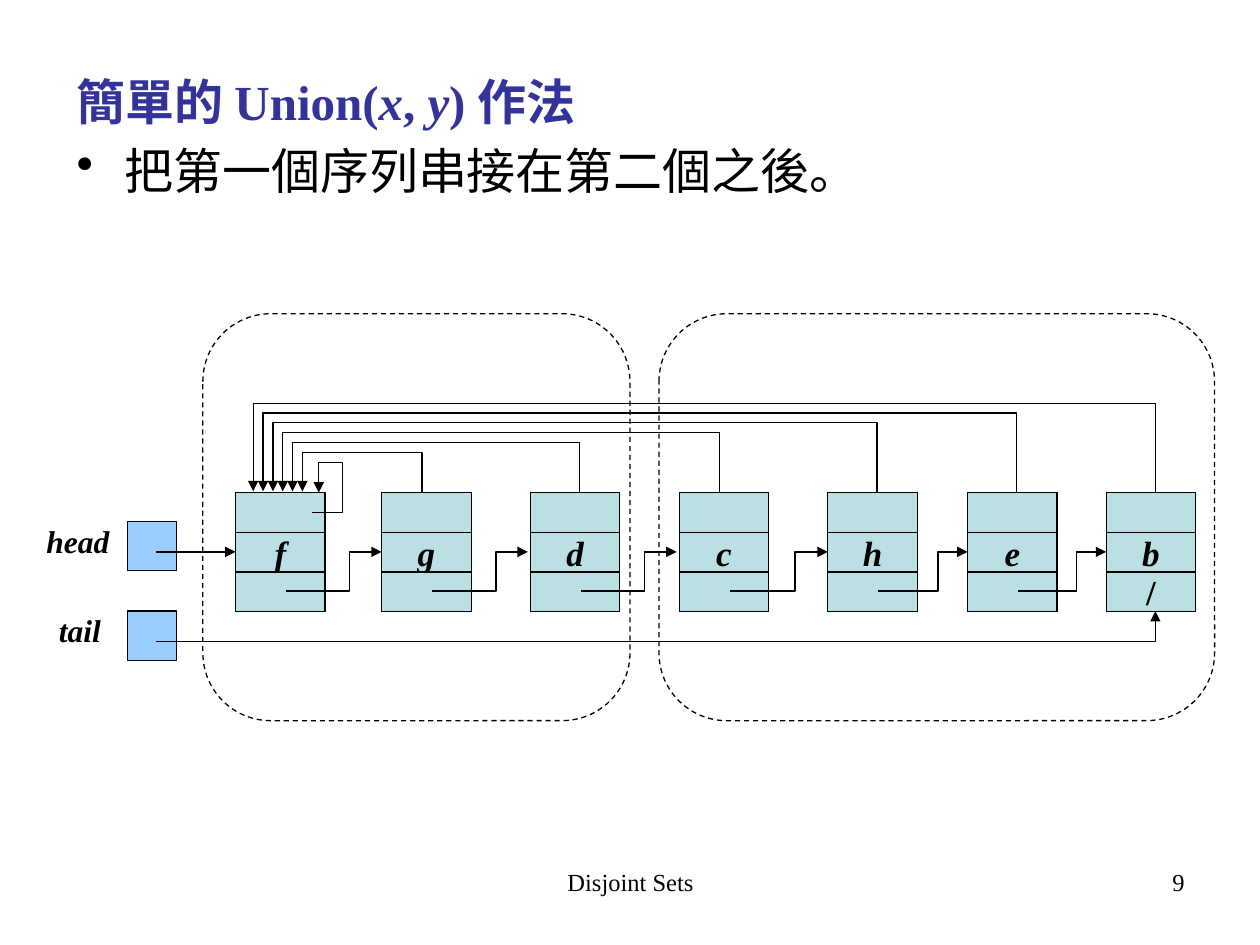
from dataclasses import dataclass

from lxml import etree
from pptx import Presentation
from pptx import util as u
from pptx.dml.color import RGBColor
from pptx.enum import dml, shapes, text
from pptx.oxml import ns

BLACK = RGBColor(0x00, 0x00, 0x00)
TITLE_BLUE = RGBColor(0x33, 0x33, 0x99)
CELL_TEAL = RGBColor(0xBB, 0xE0, 0xE3)
POINTER_BLUE = RGBColor(0x99, 0xCC, 0xFF)
FONT = "Times New Roman"

CELL_W, CELL_H = 0.71, 0.315
NODE_TOP = 3.91
MEMBER_MID = 4.38
NEXT_MID = 4.69
SLOT_GAP = 0.39 / 5  # between neighbouring pointers back to the representative

Point = tuple[float, float]


@dataclass(frozen=True)
class Node:
    name: str
    left: float
    back_dx: float = 0.39  # where the pointer to the representative leaves
    entry_gap: float = 0.0  # space before the node for the arriving arrow
    next_text: str = ""


@dataclass(frozen=True)
class Pointer:
    label: str
    label_left: float
    label_top: float
    label_width: float
    box_top: float


NODES = [
    Node("f", 1.87),
    Node("g", 3.03, back_dx=0.32),
    Node("d", 4.21, entry_gap=0.02),
    Node("c", 5.39, back_dx=0.32, entry_gap=0.02),
    Node("h", 6.57),
    Node("e", 7.68),
    Node("b", 8.78, next_text="/"),
]
POINTERS = [
    Pointer("head", 0.27, 4.09, 0.7, 4.14),
    Pointer("tail", 0.37, 4.8, 0.53, 4.85),
]
SETS = [(1.61, 3.39), (5.23, 4.41)]  # left, width


def style_font(font, size, color=BLACK, bold=False, italic=None):
    font.name = FONT
    font.size = u.Pt(size)
    font.bold = bold
    font.italic = italic
    font.color.rgb = color


def style_line(line):
    line.color.rgb = BLACK
    line.width = u.Pt(0.75)


def add_arrowhead(s):
    ln = s.line._get_or_add_ln()
    etree.SubElement(ln, ns.qn("a:tailEnd"), type="triangle")


def add_text(slide, content: str, left: float, top: float, width: float, height: float,
             size: float, align=text.PP_ALIGN.LEFT, bold=False, italic=None, wrap=True):
    s = slide.shapes.add_textbox(*map(u.Inches, (left, top, width, height)))
    tf = s.text_frame
    tf.word_wrap = wrap
    p = tf.paragraphs[0]
    p.text = content
    p.alignment = align
    style_font(p.font, size, bold=bold, italic=italic)


def add_box(slide, left: float, top: float, width: float, height: float,
            fill: RGBColor, label: str = "", italic: bool = True):
    s = slide.shapes.add_shape(shapes.MSO_SHAPE.RECTANGLE,
                               *map(u.Inches, (left, top, width, height)))
    s.shadow.inherit = False
    s.fill.solid()
    s.fill.fore_color.rgb = fill
    style_line(s.line)
    if label:
        tf = s.text_frame
        tf.word_wrap = False
        tf.vertical_anchor = text.MSO_ANCHOR.MIDDLE
        p = tf.paragraphs[0]
        p.text = label
        p.alignment = text.PP_ALIGN.CENTER
        style_font(p.font, 20, bold=True, italic=italic)


def add_path_arrow(slide, *points: Point):
    """Draw a bent arrow through the points, its head at the last one."""
    start, *rest = [(u.Inches(x), u.Inches(y)) for x, y in points]
    builder = slide.shapes.build_freeform(*start)
    builder.add_line_segments(rest, close=False)
    s = builder.convert_to_shape()
    s.shadow.inherit = False
    s.fill.background()
    style_line(s.line)
    add_arrowhead(s)


def add_straight_arrow(slide, start: Point, end: Point):
    s = slide.shapes.add_connector(shapes.MSO_CONNECTOR.STRAIGHT,
                                   *map(u.Inches, (*start, *end)))
    etree.SubElement(s._element.spPr, ns.qn("a:effectLst"))
    style_line(s.line)
    add_arrowhead(s)


def add_set_outline(slide, left: float, width: float):
    s = slide.shapes.add_shape(shapes.MSO_SHAPE.ROUNDED_RECTANGLE,
                               *map(u.Inches, (left, 2.49, width, 3.23)))
    s.adjustments[0] = 1 / 6
    s.shadow.inherit = False
    s.fill.background()
    style_line(s.line)
    s.line.dash_style = dml.MSO_LINE.DASH


def add_node(slide, node: Node):
    for row, label in enumerate(("", node.name, node.next_text)):
        add_box(slide, node.left, NODE_TOP + row * CELL_H, CELL_W, CELL_H,
                CELL_TEAL, label, italic=row == 1)


def add_back_pointer(slide, node: Node, slot: int):
    start_x = node.left + node.back_dx
    slot_x = 2.4 - slot * SLOT_GAP
    level = 3.59 - slot * SLOT_GAP
    add_path_arrow(slide, (start_x, 4.07), (start_x, level), (slot_x, level), (slot_x, 3.9))


def add_next_pointer(slide, node: Node, following: Node):
    start_x = node.left + 0.4
    end_x = following.left - following.entry_gap
    bend_x = start_x + (end_x - start_x) * 2 / 3
    add_path_arrow(slide, (start_x, NEXT_MID), (bend_x, NEXT_MID),
                   (bend_x, MEMBER_MID), (end_x, MEMBER_MID))


def add_body(slide):
    s = slide.shapes.add_textbox(*map(u.Inches, (0.51, 0.52, 9, 4.95)))
    tf = s.text_frame
    tf.word_wrap = True
    title, point = tf.paragraphs[0], tf.add_paragraph()
    for part in ("簡單的 Union(", "x", ", ", "y", ") 作法"):
        r = title.add_run()
        r.text = part
        style_font(r.font, 28, TITLE_BLUE, bold=True, italic=part in ("x", "y"))
    point.text = "把第一個序列串接在第二個之後。"
    style_font(point.font, 28)
    for p, bullet in ((title, ""), (point, "•")):
        pPr = p._p.get_or_add_pPr()
        pPr.set("marL", str(u.Inches(0.38)))
        pPr.set("indent", str(u.Inches(-0.38)))
        before = etree.Element(ns.qn("a:spcBef"))
        etree.SubElement(before, ns.qn("a:spcPct"), val="20000")
        pPr.insert(0, before)
        if bullet:
            mark = etree.Element(ns.qn("a:buChar"), char=bullet)
            pPr.insert(1, mark)


def main():
    prs = Presentation()
    prs.slide_width, prs.slide_height = u.Inches(10), u.Inches(7.5)
    slide = prs.slides.add_slide(prs.slide_layouts[6])

    add_text(slide, "Disjoint Sets", 3.42, 6.83, 3.17, 0.52, 14, text.PP_ALIGN.CENTER)
    add_text(slide, "9", 7.17, 6.83, 2.33, 0.52, 14, text.PP_ALIGN.RIGHT)
    add_body(slide)

    for left, width in SETS:
        add_set_outline(slide, left, width)
    for slot, node in enumerate(NODES[1:]):
        add_back_pointer(slide, node, slot)
    for node in NODES:
        add_node(slide, node)
    for node, following in zip(NODES, NODES[1:]):
        add_next_pointer(slide, node, following)
    # the representative points to itself
    add_path_arrow(slide, (2.48, 4.07), (2.72, 4.07), (2.72, 3.67), (2.53, 3.67), (2.53, 3.91))

    for pointer in POINTERS:
        add_box(slide, 1.01, pointer.box_top, 0.39, 0.39, POINTER_BLUE)
        add_text(slide, pointer.label, pointer.label_left, pointer.label_top,
                 pointer.label_width, 0.4, 18, bold=True, italic=True, wrap=False)
    add_straight_arrow(slide, (1.24, MEMBER_MID), (NODES[0].left, MEMBER_MID))
    tail_x = NODES[-1].left + 0.39
    add_path_arrow(slide, (1.24, 5.09), (tail_x, 5.09), (tail_x, 4.85))

    prs.save("out.pptx")


if __name__ == "__main__":
    main()
